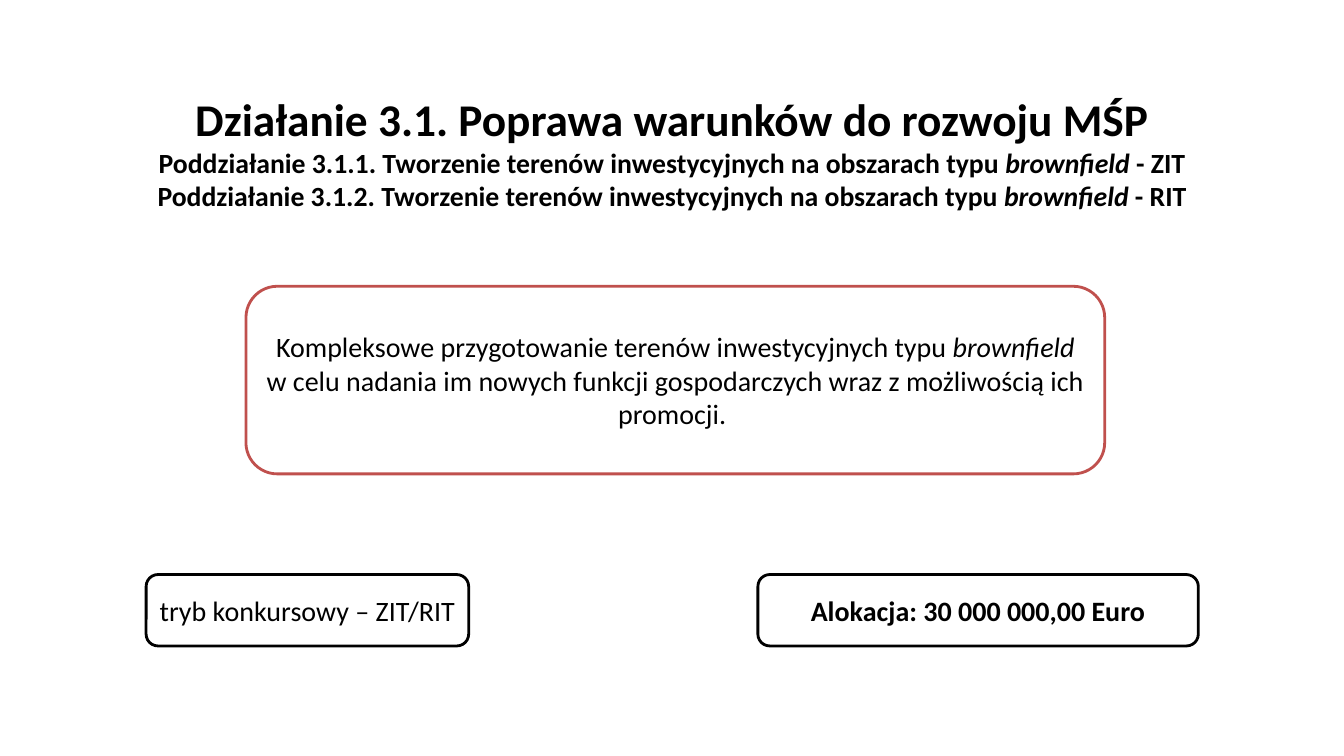
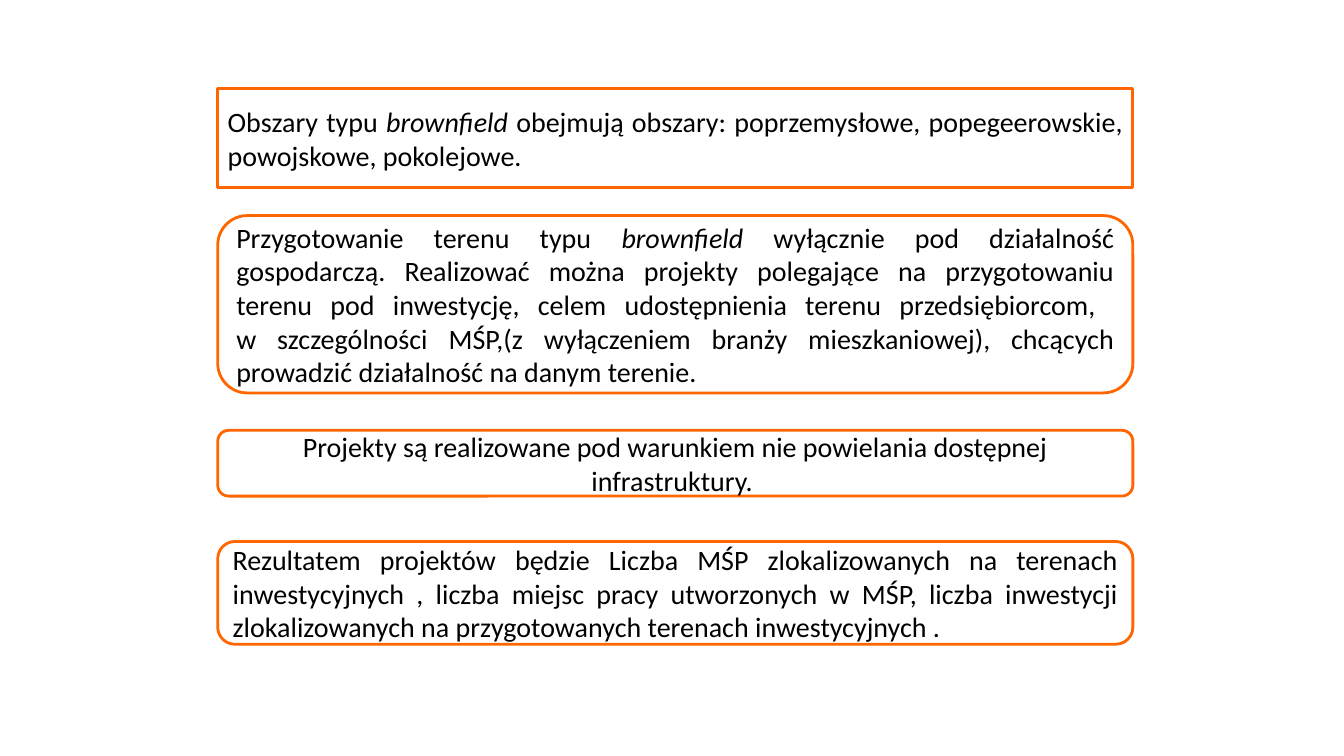
from dataclasses import dataclass

from pptx import Presentation
from pptx.dml.color import RGBColor
from pptx.enum import shapes, text
from pptx.util import Pt

FONT = "Calibri"
BLACK, WHITE, RED, ORANGE = "000000", "FFFFFF", "C0504D", "FF6600"
HEADING_SIZE, SUBHEADING_SIZE, BODY_SIZE = 32.4, 19.8, 20
COLUMN_LEFT, COLUMN_WIDTH = 155.5, 653.7

ROUNDED = shapes.MSO_SHAPE.ROUNDED_RECTANGLE
RECTANGLE = shapes.MSO_SHAPE.RECTANGLE
CENTER = text.PP_ALIGN.CENTER
JUSTIFY = text.PP_ALIGN.JUSTIFY


@dataclass
class Frame:
    content: str
    left: float
    top: float
    width: float
    height: float
    outline: str
    align: text.PP_ALIGN = CENTER
    outline_shape: shapes.MSO_SHAPE = ROUNDED
    bold: bool = False
    fill: str | None = None


@dataclass
class Heading:
    content: str
    size: float


def color(value: str) -> RGBColor:
    return RGBColor.from_string(value)


def write(paragraph, content: str, size: float, align, bold: bool) -> None:
    """Write content, with *italic* parts and line breaks at newlines."""
    for line_number, line in enumerate(content.split("\n")):
        if line_number:
            paragraph.add_line_break()
        for part_number, part in enumerate(line.split("*")):
            if part:
                run = paragraph.add_run()
                run.text = part
                if part_number % 2:
                    run.font.italic = True
    paragraph.alignment = align
    paragraph.font.name = FONT
    paragraph.font.size = Pt(size)
    paragraph.font.bold = bold
    paragraph.font.color.rgb = color(BLACK)


def draw_frame(slide, frame: Frame) -> None:
    box = slide.shapes.add_shape(frame.outline_shape, Pt(frame.left), Pt(frame.top),
                                 Pt(frame.width), Pt(frame.height))
    box.shadow.inherit = False
    box.line.color.rgb = color(frame.outline)
    box.line.width = Pt(2)
    if frame.fill:
        box.fill.solid()
        box.fill.fore_color.rgb = color(frame.fill)
    else:
        box.fill.background()
    body = box.text_frame
    body.word_wrap = True
    body.vertical_anchor = text.MSO_ANCHOR.MIDDLE
    write(body.paragraphs[0], frame.content, BODY_SIZE, frame.align, frame.bold)


def draw_title(slide, headings: list[Heading]) -> None:
    title = slide.shapes.add_textbox(Pt(66), Pt(61.5), Pt(828), Pt(71)).text_frame
    title.word_wrap = True
    for number, heading in enumerate(headings):
        paragraph = title.add_paragraph() if number else title.paragraphs[0]
        write(paragraph, heading.content, heading.size, CENTER, True)


def column_frame(content: str, top: float, height: float, align=JUSTIFY,
                 outline_shape=ROUNDED) -> Frame:
    return Frame(content, COLUMN_LEFT, top, COLUMN_WIDTH, height, ORANGE, align, outline_shape)


TITLE = [
    Heading("Działanie 3.1. Poprawa warunków do rozwoju MŚP", HEADING_SIZE),
    Heading("Poddziałanie 3.1.1. Tworzenie terenów inwestycyjnych na obszarach typu "
            "*brownfield* - ZIT", SUBHEADING_SIZE),
    Heading("Poddziałanie 3.1.2. Tworzenie terenów inwestycyjnych na obszarach typu "
            "*brownfield* - RIT", SUBHEADING_SIZE),
]

MEASURE = [
    Frame("Kompleksowe przygotowanie terenów inwestycyjnych typu *brownfield* w celu nadania "
          "im nowych funkcji gospodarczych wraz z możliwością ich promocji. ",
          175.7, 204.5, 613.4, 134, RED),
    Frame("tryb konkursowy – ZIT/RIT", 104.4, 410.4, 230.4, 51, BLACK, fill=WHITE),
    Frame("Alokacja: 30 000 000,00 Euro", 541.4, 410.4, 314.6, 51, BLACK, bold=True),
]

CONDITIONS = [
    column_frame("Obszary typu *brownfield* obejmują obszary: poprzemysłowe, popegeerowskie, "
                 "powojskowe, pokolejowe.", 63.2, 71, outline_shape=RECTANGLE),
    column_frame("Przygotowanie terenu typu *brownfield* wyłącznie pod działalność gospodarczą. "
                 "Realizować można projekty polegające na przygotowaniu terenu pod inwestycję, "
                 "celem udostępnienia terenu przedsiębiorcom, \nw szczególności MŚP,"
                 "(z wyłączeniem branży mieszkaniowej), chcących prowadzić działalność "
                 "na danym terenie.", 154, 126.7),
    column_frame("Projekty są realizowane pod warunkiem nie powielania dostępnej "
                 "infrastruktury. ", 307.4, 47, align=CENTER),
    column_frame("Rezultatem projektów będzie Liczba MŚP zlokalizowanych na terenach "
                 "inwestycyjnych , liczba miejsc pracy utworzonych w MŚP, liczba inwestycji "
                 "zlokalizowanych na przygotowanych terenach inwestycyjnych .", 386.8, 73.4),
]


def main() -> None:
    deck = Presentation()
    deck.slide_width, deck.slide_height = Pt(960), Pt(540)
    blank = deck.slide_layouts[6]
    for headings, frames in ((TITLE, MEASURE), ([], CONDITIONS)):
        slide = deck.slides.add_slide(blank)
        if headings:
            draw_title(slide, headings)
        for frame in frames:
            draw_frame(slide, frame)
    deck.save("out.pptx")


if __name__ == "__main__":
    main()
